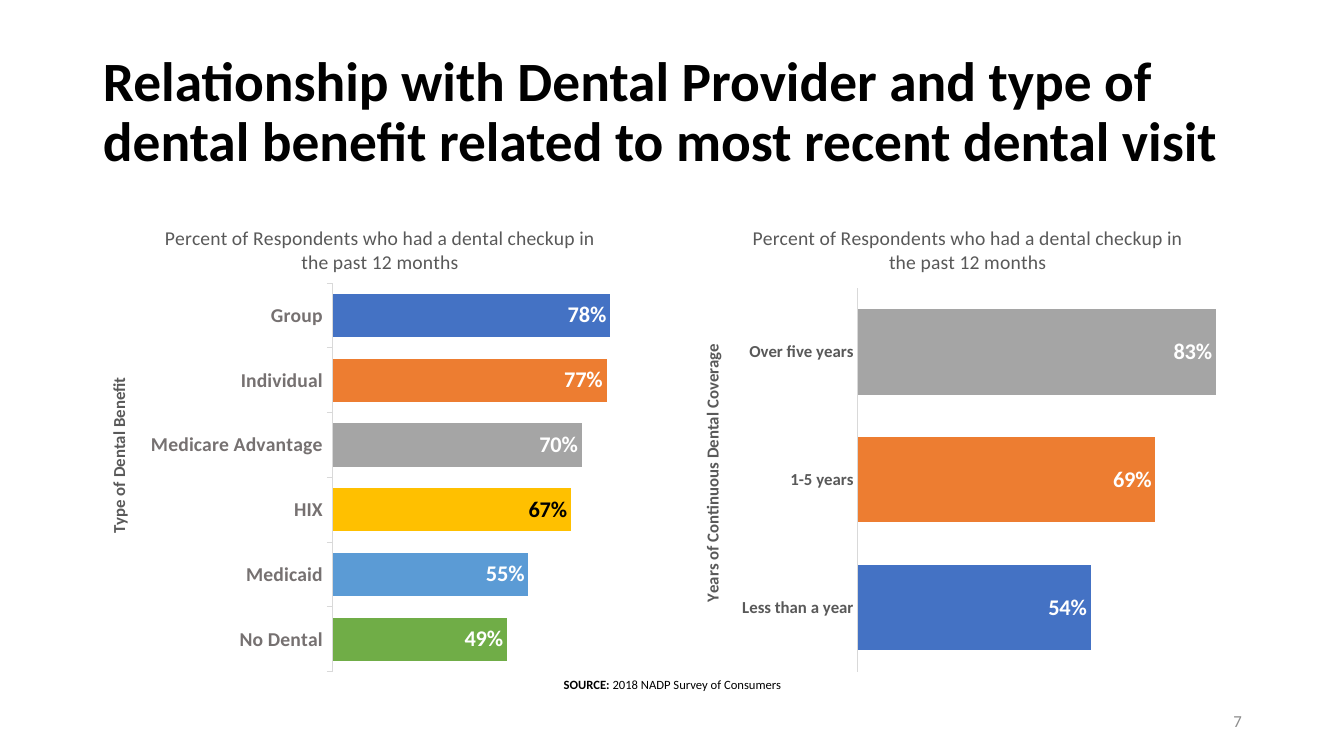
from dataclasses import dataclass

import lxml.etree
import pptx
import pptx.chart.data
import pptx.dml.color
import pptx.enum.chart
import pptx.enum.text
import pptx.oxml.ns
import pptx.util

Cm = pptx.util.Cm
FONT = "Calibri"
GREY = "595959"
PALETTE = ["4472C4", "ED7D31", "A5A5A5", "FFC000", "5B9BD5", "70AD47"]
CHART_TITLE = "Percent of Respondents who had a dental checkup in the past 12 months"


@dataclass
class BarPanel:
    left: float
    axis_title: str
    categories: list[str]
    values: list[float]
    label_size: float
    label_color: str
    top_down: bool
    plot_layout: dict[str, float]
    axis_title_layout: dict[str, float]


@dataclass
class TextRun:
    text: str
    size: float
    color: str = "000000"
    bold: bool = False


PANELS = [
    BarPanel(
        2.34, "Type of Dental Benefit",
        ["Group", "Individual", "Medicare Advantage", "HIX", "Medicaid", "No Dental"],
        [0.78, 0.77, 0.7, 0.67, 0.55, 0.49],
        14, "767171", True,
        {"x": 0.42, "y": 0.17, "w": 0.56, "h": 0.81},
        {"x": 0.02, "y": 0.36},
    ),
    BarPanel(
        17.15, "Years of Continuous Dental Coverage",
        ["Less than a year", "1-5 years", "Over five years"],
        [0.54, 0.69, 0.83],
        12, GREY, False,
        {"x": 0.31, "y": 0.18, "w": 0.68, "h": 0.8},
        {"x": 0.03, "y": 0.29},
    ),
]


def rgb(color: str) -> pptx.dml.color.RGBColor:
    return pptx.dml.color.RGBColor.from_string(color)


def style_font(font, size: float, color: str, bold: bool = False) -> None:
    font.name = FONT
    font.size = pptx.util.Pt(size)
    font.bold = bold
    font.color.rgb = rgb(color)


def add_runs(paragraph, runs: list[TextRun]) -> None:
    for item in runs:
        run = paragraph.add_run()
        run.text = item.text
        style_font(run.font, item.size, item.color, item.bold)


def place_part(element, index: int, layout: dict[str, float]) -> None:
    qn = pptx.oxml.ns.qn
    for existing in element.findall(qn("c:layout")):
        element.remove(existing)
    holder = lxml.etree.Element(qn("c:layout"))
    element.insert(index, holder)
    manual = lxml.etree.SubElement(holder, qn("c:manualLayout"))
    settings = {"xMode": "edge", "yMode": "edge", **layout}
    if "w" in layout:
        settings = {"layoutTarget": "inner", **settings}
    for name, value in settings.items():
        lxml.etree.SubElement(manual, qn(f"c:{name}")).set("val", str(value))


def fill_chart_title(title, run: TextRun, layout: dict[str, float]) -> None:
    add_runs(title.text_frame.paragraphs[0], [run])
    place_part(title._element, 1, layout)


def format_axes(chart, panel: BarPanel) -> None:
    category_axis = chart.category_axis
    category_axis.reverse_order = panel.top_down
    category_axis.has_major_gridlines = False
    ticks = pptx.enum.chart.XL_TICK_MARK
    category_axis.major_tick_mark = ticks.OUTSIDE if panel.top_down else ticks.NONE
    category_axis.format.line.color.rgb = rgb("D9D9D9")
    category_axis.format.line.width = pptx.util.Pt(0.75)
    style_font(category_axis.tick_labels.font, panel.label_size, panel.label_color, True)
    fill_chart_title(category_axis.axis_title, TextRun(panel.axis_title, 12, GREY, True),
                     panel.axis_title_layout)
    body = category_axis.axis_title._element.find(".//" + pptx.oxml.ns.qn("a:bodyPr"))
    body.set("rot", "-5400000")
    body.set("vert", "horz")

    value_axis = chart.value_axis
    value_axis.minimum_scale = 0
    value_axis.maximum_scale = 0.9
    value_axis.has_major_gridlines = False
    value_axis.major_tick_mark = ticks.NONE
    value_axis.tick_label_position = pptx.enum.chart.XL_TICK_LABEL_POSITION.NONE
    value_axis.format.line.fill.background()
    value_axis.visible = panel.top_down


def format_bars(plot) -> None:
    plot.gap_width = 50
    plot.vary_by_categories = False
    series = plot.series[0]
    labels = series.data_labels
    labels.show_value = True
    labels.number_format = "0%"
    labels.number_format_is_linked = False
    labels.position = pptx.enum.chart.XL_LABEL_POSITION.INSIDE_END
    style_font(labels.font, 16, "FFFFFF", True)
    for index, color in zip(range(len(series.values)), PALETTE):
        point = series.points[index]
        point.format.fill.solid()
        point.format.fill.fore_color.rgb = rgb(color)
        if color == "FFC000":
            style_font(point.data_label.font, 16, "000000", True)
            point.data_label.position = labels.position


def add_bar_panel(slide, panel: BarPanel) -> None:
    data = pptx.chart.data.CategoryChartData(number_format="0%")
    data.categories = panel.categories
    data.add_series("Series 1", panel.values)
    chart = slide.shapes.add_chart(
        pptx.enum.chart.XL_CHART_TYPE.BAR_CLUSTERED,
        Cm(panel.left), Cm(5.08), Cm(14.4), Cm(12.09), data,
    ).chart
    style_font(chart.font, 10, "000000")
    chart.has_legend = False
    chart.has_title = True
    fill_chart_title(chart.chart_title, TextRun(CHART_TITLE, 14, GREY), {"x": 0.12, "y": 0.04})
    format_axes(chart, panel)
    format_bars(chart.plots[0])
    plot_area = chart._chartSpace.find(".//" + pptx.oxml.ns.qn("c:plotArea"))
    place_part(plot_area, 0, panel.plot_layout)


def add_note(slide, left: float, top: float, width: float, height: float,
             alignment, anchor, runs: list[TextRun]) -> None:
    text_frame = slide.shapes.add_textbox(Cm(left), Cm(top), Cm(width), Cm(height)).text_frame
    text_frame.word_wrap = True
    text_frame.vertical_anchor = anchor
    text_frame.paragraphs[0].alignment = alignment
    add_runs(text_frame.paragraphs[0], runs)


def fill_title(slide) -> None:
    title = slide.shapes.title
    title.left, title.top, title.width, title.height = Cm(2.34), Cm(1.02), Cm(29.21), Cm(3.68)
    text_frame = title.text_frame
    text_frame.word_wrap = True
    text_frame.auto_size = pptx.enum.text.MSO_AUTO_SIZE.NONE
    text_frame.vertical_anchor = pptx.enum.text.MSO_ANCHOR.MIDDLE
    paragraph = text_frame.paragraphs[0]
    paragraph.alignment = pptx.enum.text.PP_ALIGN.LEFT
    paragraph.line_spacing = 0.9
    heading = ("Relationship with Dental Provider and type of "
               "dental benefit related to most recent dental visit")
    add_runs(paragraph, [TextRun(heading, 39.6, bold=True)])


def main() -> None:
    presentation = pptx.Presentation()
    presentation.slide_width = Cm(33.87)
    presentation.slide_height = Cm(19.05)
    slide = presentation.slides.add_slide(presentation.slide_layouts[5])
    fill_title(slide)
    for panel in PANELS:
        add_bar_panel(slide, panel)
    align = pptx.enum.text.PP_ALIGN
    anchor = pptx.enum.text.MSO_ANCHOR
    add_note(slide, 7.7, 16.92, 18.49, 0.64, align.CENTER, anchor.TOP,
             [TextRun("SOURCE: ", 9, bold=True), TextRun("2018 NADP Survey of Consumers", 9)])
    add_note(slide, 23.93, 17.65, 7.62, 1.02, align.RIGHT, anchor.MIDDLE,
             [TextRun("7", 12, "8C8C8C")])
    presentation.save("out.pptx")


if __name__ == "__main__":
    main()
